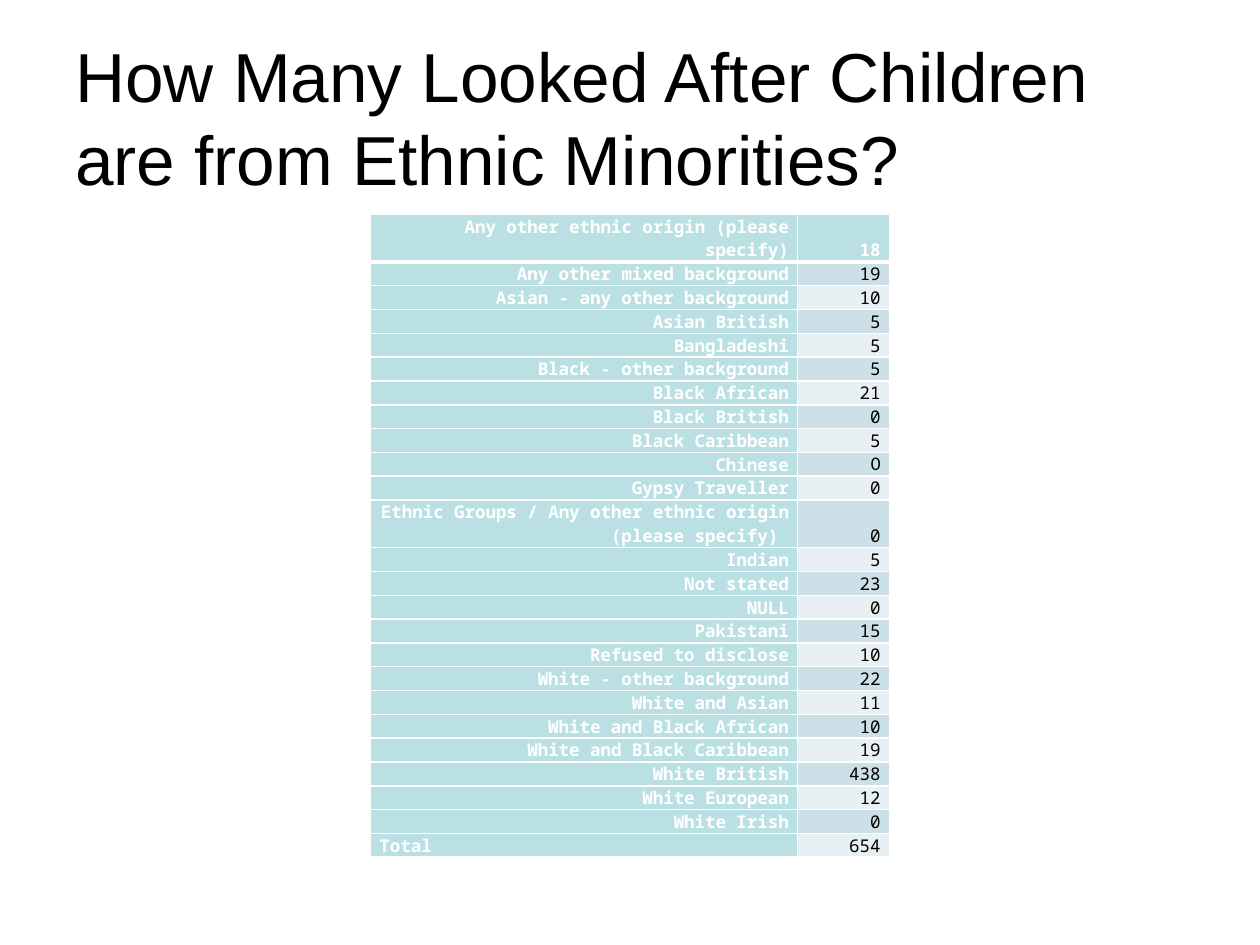
from dataclasses import dataclass
from math import ceil

from pptx import Presentation
from pptx.dml.color import RGBColor
from pptx.enum.text import MSO_ANCHOR, PP_ALIGN
from pptx.oxml import parse_xml
from pptx.oxml.ns import nsdecls
from pptx.util import Cm, Pt


@dataclass(frozen=True)
class Theme:
    black: str = "000000"
    white: str = "FFFFFF"
    teal: str = "BBE0E3"
    bands: tuple = ("E8F0F4", "CDE0E8")
    title_font: str = "Arial"
    table_font: str = "Noto Sans Mono"
    odd_font: str = "Calibri"
    title_size: float = 39.6
    table_size: float = 10
    odd_size: float = 11
    line: float = 1
    header_line: float = 3


THEME = Theme()
LINE_HEIGHT = Cm(0.48)
CHARACTERS_PER_LINE = 39  # of the monospaced font in the group column

ROWS = [
    ("Any other ethnic origin (please specify)", 18),
    ("Any other mixed background", 19),
    ("Asian - any other background", 10),
    ("Asian British", 5),
    ("Bangladeshi", 5),
    ("Black - other background", 5),
    ("Black African", 21),
    ("Black British", 0),
    ("Black Caribbean", 5),
    ("Chinese", 0),
    ("Gypsy Traveller", 0),
    ("Ethnic Groups / Any other ethnic origin (please specify) ", 0),
    ("Indian", 5),
    ("Not stated", 23),
    ("NULL", 0),
    ("Pakistani", 15),
    ("Refused to disclose", 10),
    ("White - other background", 22),
    ("White and Asian", 11),
    ("White and Black African", 10),
    ("White and Black Caribbean", 19),
    ("White British", 438),
    ("White European", 12),
    ("White Irish", 0),
    ("Total", 654),
]


def write_text(frame, text, *, font=THEME.table_font, size=THEME.table_size,
               color=THEME.black, bold=False, align=PP_ALIGN.RIGHT):
    para = frame.paragraphs[0]
    para.alignment = align
    span = para.add_run()
    span.text = text
    span.font.name = font
    span.font.size = Pt(size)
    span.font.bold = bold
    span.font.color.rgb = RGBColor.from_string(color)


def add_title(page, text):
    box = page.shapes.add_textbox(Cm(1.27), Cm(0.76), Cm(22.86), Cm(3.18))
    frame = box.text_frame
    frame.word_wrap = True
    frame.vertical_anchor = MSO_ANCHOR.MIDDLE
    write_text(frame, text, font=THEME.title_font, size=THEME.title_size,
               align=PP_ALIGN.LEFT)


def set_borders(cell, top, bottom):
    properties = cell._tc.get_or_add_tcPr()
    widths = {"L": THEME.line, "R": THEME.line, "T": top, "B": bottom}
    for side, width in widths.items():
        properties.append(parse_xml(
            f'<a:ln{side} {nsdecls("a")} w="{Pt(width)}"><a:solidFill>'
            f'<a:srgbClr val="{THEME.white}"/></a:solidFill></a:ln{side}>'))


def fill_cell(cell, text, row, fill, **text_format):
    cell.vertical_anchor = MSO_ANCHOR.BOTTOM
    cell.margin_left = cell.margin_right = Cm(0.18)
    cell.margin_top = cell.margin_bottom = 0
    set_borders(cell,
                top=THEME.header_line if row == 1 else THEME.line,
                bottom=THEME.header_line if row == 0 else THEME.line)
    cell.fill.solid()
    cell.fill.fore_color.rgb = RGBColor.from_string(fill)
    write_text(cell.text_frame, text, **text_format)


def add_count_table(page, rows):
    # Each row is as high as its wrapped group name
    heights = [LINE_HEIGHT * ceil(len(group) / CHARACTERS_PER_LINE) for group, _ in rows]
    table = page.shapes.add_table(len(rows), 2, Cm(7.47), Cm(4.32), Cm(10.46),
                                  sum(heights)).table
    for column, width in zip(table.columns, (8.61, 1.85)):
        column.width = Cm(width)

    heading = {"color": THEME.white, "bold": True}
    for index, (group, count) in enumerate(rows):
        table.rows[index].height = heights[index]
        # Group names, with the total set to the left
        align = PP_ALIGN.LEFT if group == "Total" else PP_ALIGN.RIGHT
        fill_cell(table.cell(index, 0), group, index, THEME.teal, align=align, **heading)

        # Counts, banded below the header row
        fill = THEME.bands[index % 2] if index else THEME.teal
        count_format = {} if index else heading
        if group == "Chinese":
            count_format = {"font": THEME.odd_font, "size": THEME.odd_size}
        fill_cell(table.cell(index, 1), str(count), index, fill, **count_format)


def main():
    deck = Presentation()
    deck.slide_width, deck.slide_height = Cm(25.4), Cm(19.05)
    page = deck.slides.add_slide(deck.slide_layouts[6])
    add_title(page, "How Many Looked After Children are from Ethnic Minorities?")
    add_count_table(page, ROWS)
    deck.save("out.pptx")


if __name__ == "__main__":
    main()
